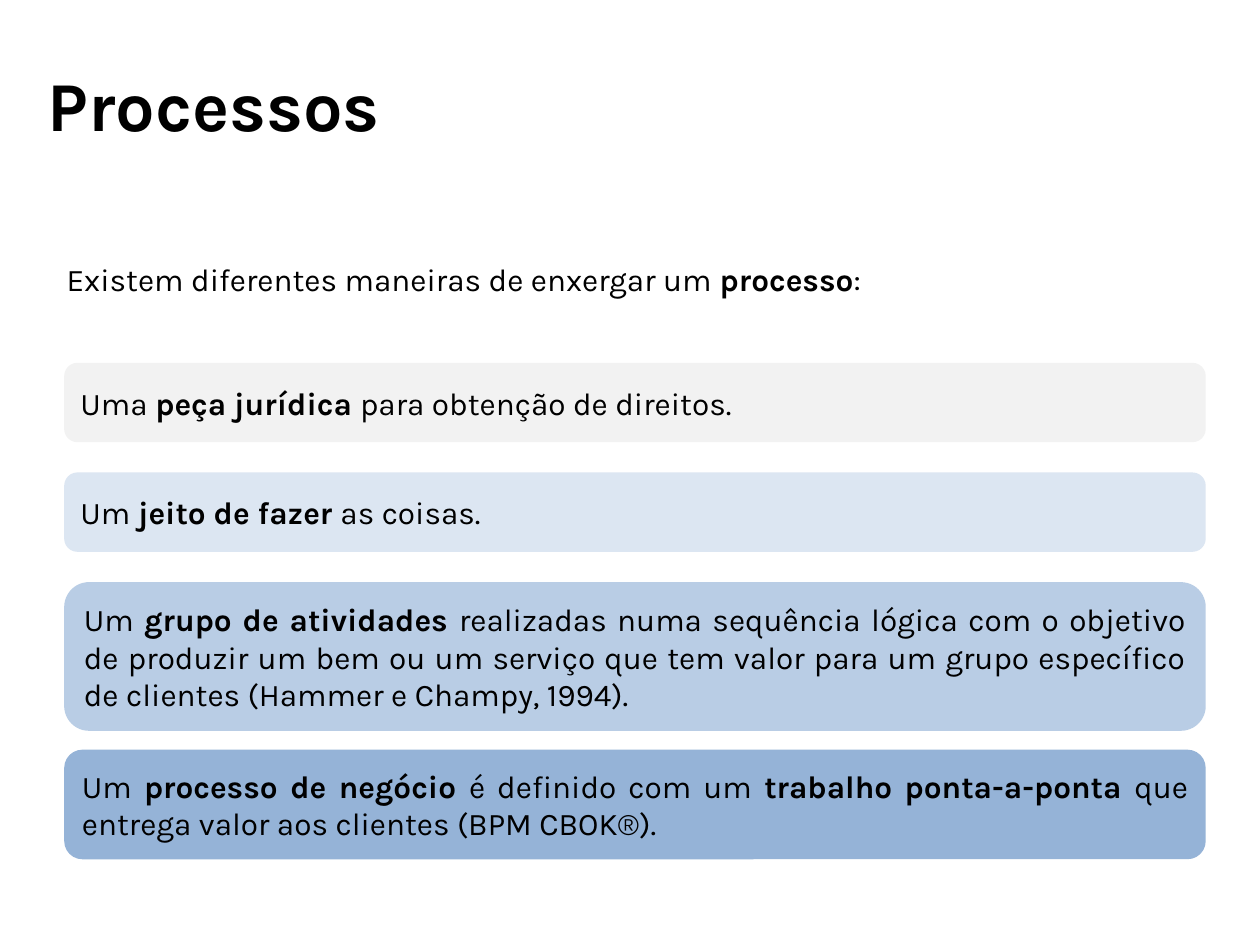
from pptx import Presentation
from pptx.dml.color import RGBColor
from pptx.enum.shapes import MSO_SHAPE
from pptx.enum.text import MSO_ANCHOR, PP_ALIGN
from pptx.util import Inches, Pt

ROUNDED = MSO_SHAPE.ROUNDED_RECTANGLE
MIDDLE = MSO_ANCHOR.MIDDLE
LEFT = PP_ALIGN.LEFT
JUSTIFY = PP_ALIGN.JUSTIFY
FONT = "Karla"
BLACK = "000000"

CARD_LEFT = 0.51
CARD_WIDTH = 9.06

INTRO = [
    ("Existem diferentes maneiras de enxergar um ", False),
    ("processo", True),
    (":", False),
]
CARDS = [
    (2.88, 0.63, "F2F2F2", [
        ("Uma ", False),
        ("peça jurídica ", True),
        ("para obtenção de direitos.", False),
    ]),
    (3.75, 0.63, "DCE6F2", [
        ("Um ", False),
        ("jeito de fazer ", True),
        ("as coisas.", False),
    ]),
    (4.62, 1.18, "B9CDE5", [
        ("Um ", False),
        ("grupo de atividades ", True),
        ("realizadas numa sequência lógica com o objetivo de produzir "
         "um bem ou um serviço que tem valor para um grupo específico "
         "de clientes (Hammer e Champy, 1994).", False),
    ]),
    (5.95, 0.87, "95B3D7", [
        ("Um ", False),
        ("processo de negócio ", True),
        ("é definido com um ", False),
        ("trabalho ponta-a-ponta ", True),
        ("que entrega valor aos clientes (BPM CBOK®).", False),
    ]),
]


def color(hex_code):
    return RGBColor.from_string(hex_code)


def write_text(box, spans, size=18, align=JUSTIFY, ink=BLACK):
    frame = box.text_frame
    frame.word_wrap = True
    frame.vertical_anchor = MIDDLE
    para = frame.paragraphs[0]
    para.alignment = align
    for text, bold in spans:
        span = para.add_run()
        span.text = text
        span.font.name = FONT
        span.font.size = Pt(size)
        span.font.bold = bold
        span.font.color.rgb = color(ink)


def add_text(page, left, top, width, height, spans, **text_format):
    box = page.shapes.add_textbox(
        Inches(left), Inches(top), Inches(width), Inches(height))
    write_text(box, spans, **text_format)


def add_card(page, top, height, fill, spans):
    card = page.shapes.add_shape(
        ROUNDED, Inches(CARD_LEFT), Inches(top),
        Inches(CARD_WIDTH), Inches(height))
    card.shadow.inherit = False
    card.fill.solid()
    card.fill.fore_color.rgb = color(fill)
    card.line.fill.background()
    write_text(card, spans)


def main():
    deck = Presentation()
    deck.slide_width = Inches(10)
    deck.slide_height = Inches(7.5)
    page = deck.slides.add_slide(deck.slide_layouts[6])

    add_text(page, 0.28, 0.02, 9.45, 1.61, [("Processos", True)],
             size=40, align=LEFT)
    add_text(page, 0.43, 1.7, 9.13, 1.02, INTRO)
    for top, height, fill, spans in CARDS:
        add_card(page, top, height, fill, spans)

    deck.save("out.pptx")


if __name__ == "__main__":
    main()
